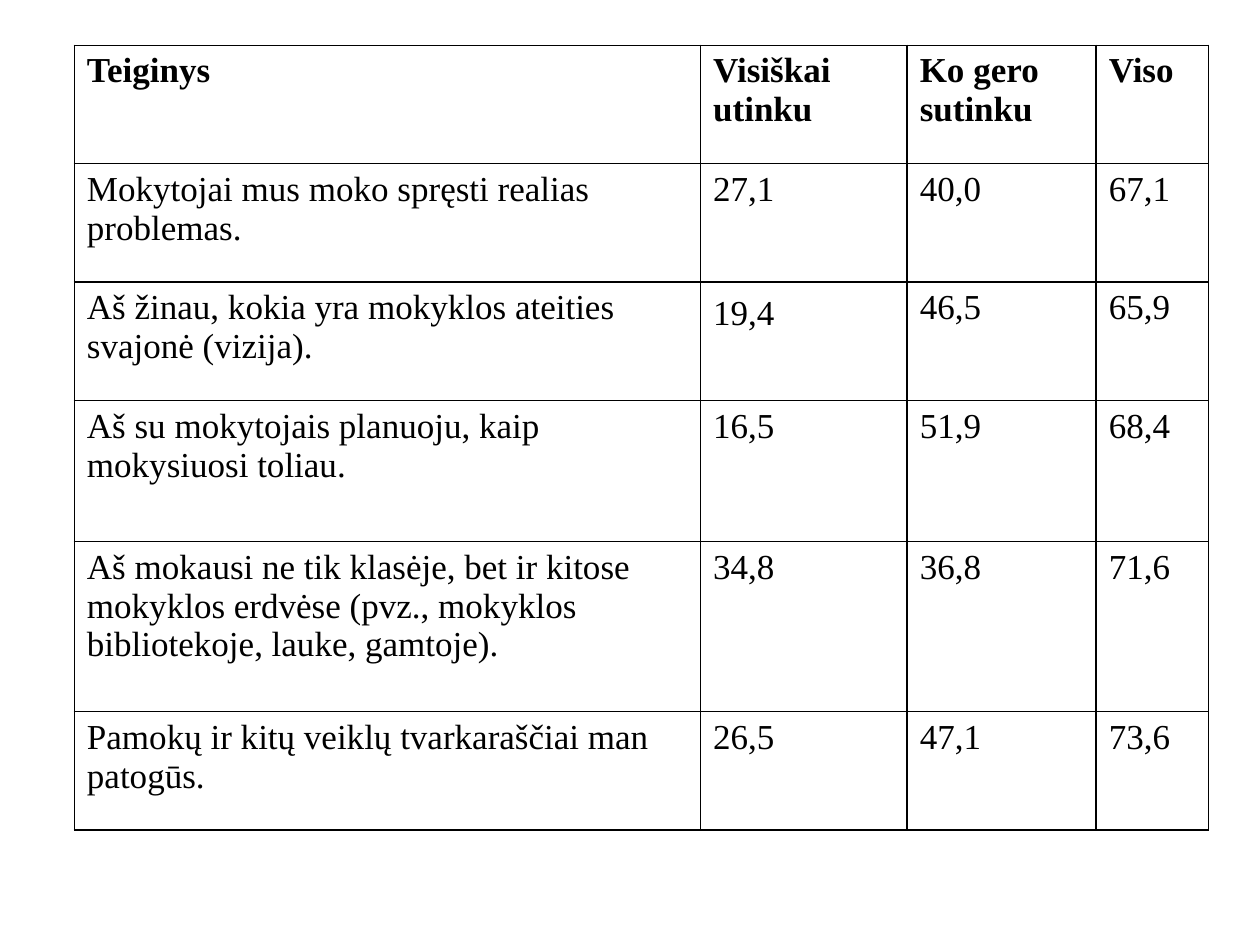
"""Build a slide with a survey table of pupils' agreement with statements."""
import lxml.etree
import pptx
import pptx.dml.color
import pptx.oxml.ns
import pptx.util

THEME = {"font": "Times New Roman", "ink": "000000", "size": 20, "border": 1}

header = ("Teiginys", "Visiškai utinku", "Ko gero sutinku", "Viso")
answers = [
    ("Mokytojai mus moko spręsti realias problemas.", "27,1", "40,0", "67,1"),
    ("Aš žinau, kokia yra mokyklos ateities svajonė (vizija).", "19,4", "46,5", "65,9"),
    ("Aš su mokytojais planuoju, kaip mokysiuosi toliau.", "16,5", "51,9", "68,4"),
    ("Aš mokausi ne tik klasėje, bet ir kitose mokyklos erdvėse "
     "(pvz., mokyklos bibliotekoje, lauke, gamtoje).", "34,8", "36,8", "71,6"),
    ("Pamokų ir kitų veiklų tvarkaraščiai man patogūs.", "26,5", "47,1", "73,6"),
]
survey = [header, *answers]
column_widths = (4.97, 1.64, 1.5, 0.89)
row_heights = (0.94, 0.94, 0.94, 1.12, 1.35, 0.94)
SPACED_CELL = (2, 1)


def add_borders(cell):
    properties = cell._tc.get_or_add_tcPr()
    for position, side in enumerate(("lnL", "lnR", "lnT", "lnB")):
        line = lxml.etree.Element(pptx.oxml.ns.qn(f"a:{side}"),
                                  w=str(pptx.util.Pt(THEME["border"])))
        fill = lxml.etree.SubElement(line, pptx.oxml.ns.qn("a:solidFill"))
        lxml.etree.SubElement(fill, pptx.oxml.ns.qn("a:srgbClr"), val=THEME["ink"])
        properties.insert(position, line)


deck = pptx.Presentation()
deck.slide_width = pptx.util.Inches(10)
deck.slide_height = pptx.util.Inches(7.5)
slide = deck.slides.add_slide(deck.slide_layouts[6])

results = slide.shapes.add_table(
    len(survey), len(header), pptx.util.Inches(0.59), pptx.util.Inches(0.36),
    pptx.util.Inches(sum(column_widths)), pptx.util.Inches(sum(row_heights))).table
results.first_row = False
results.horz_banding = False
for column, width in zip(results.columns, column_widths):
    column.width = pptx.util.Inches(width)
for row, height in zip(results.rows, row_heights):
    row.height = pptx.util.Inches(height)

for row_index, entries in enumerate(survey):
    for column_index, entry in enumerate(entries):
        cell = results.cell(row_index, column_index)
        cell.fill.background()
        add_borders(cell)
        cell.text_frame.text = entry
        paragraph = cell.text_frame.paragraphs[0]
        if (row_index, column_index) == SPACED_CELL:
            paragraph.line_spacing = 1.15
            paragraph.space_after = pptx.util.Pt(10)
        font = paragraph.runs[0].font
        font.name = THEME["font"]
        font.size = pptx.util.Pt(THEME["size"])
        font.bold = row_index == 0
        font.color.rgb = pptx.dml.color.RGBColor.from_string(THEME["ink"])

deck.save("out.pptx")
